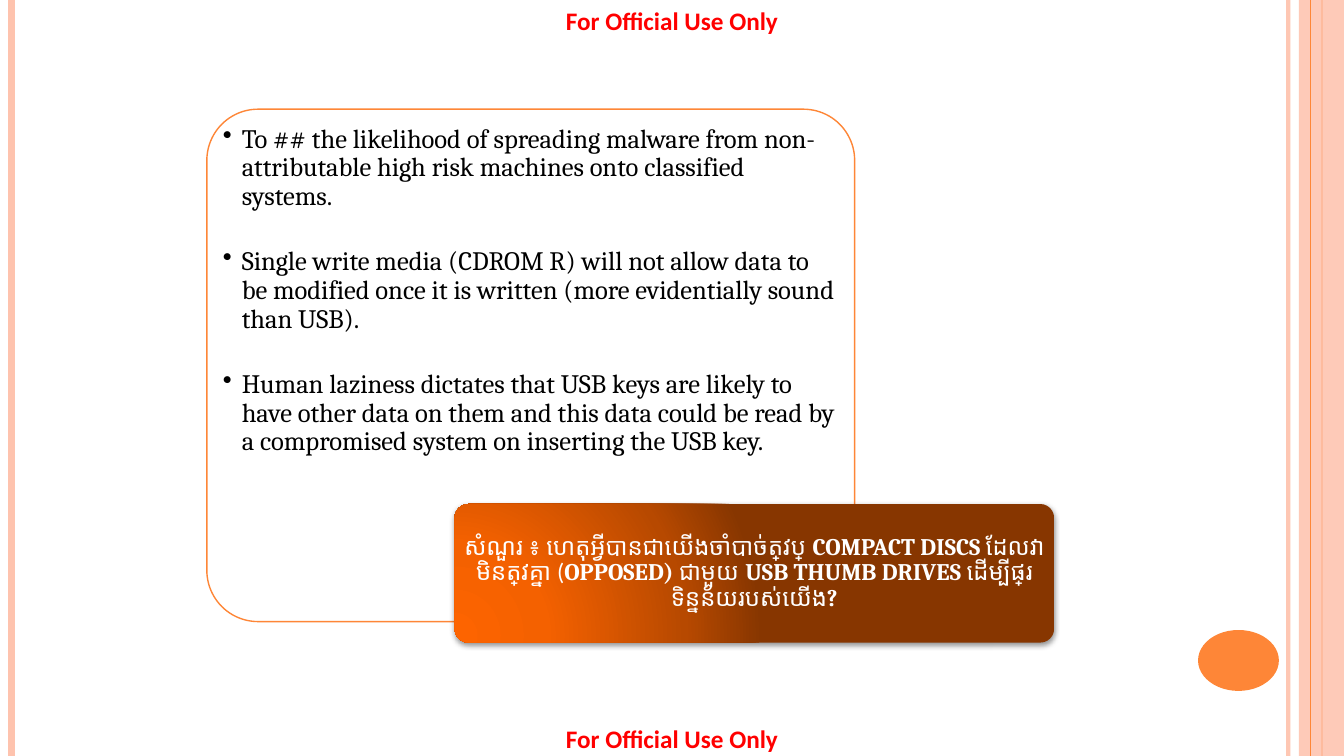
from dataclasses import dataclass

from lxml import etree
from pptx import Presentation
from pptx import util as u
from pptx.dml.color import RGBColor
from pptx.enum import shapes, text
from pptx.oxml import parse_xml
from pptx.oxml.ns import qn

PX = 9525
WIDTH, HEIGHT = 1280, 720
NS = 'xmlns:a="http://schemas.openxmlformats.org/drawingml/2006/main"'


@dataclass(frozen=True)
class Theme:
    """Colours, fonts and type sizes of the slide."""
    peach: str = "FEC3AE"
    orange: str = "FE8637"
    paper: str = "FFFFFF"
    ink: str = "000000"
    marking: str = "FF0000"
    glow: tuple = ((0, "FD6400"), (30, "F46100"), (75, "B74900"), (100, "873600"))
    sans: str = "Calibri"
    serif: str = "Cambria"
    marking_size: int = 18
    reason_size: int = 19
    question_size: int = 17


THEME = Theme()
MARKING = "For Official Use Only"
REASONS = (
    "To ## the likelihood of spreading malware from non-attributable high risk "
    "machines onto classified systems.",
    "Single write media (CDROM R) will not allow data to be modified once it is "
    "written (more evidentially sound than USB).",
    "Human laziness dictates that USB keys are likely to have other data on them "
    "and this data could be read by a compromised system on inserting the USB key.",
)
QUESTION = (
    ("សំណួរ ៖ ហេតុអ្វីបានជាយើងចាំបាច់ត្រូវប្រើ", False),
    (" COMPACT DISCS ", True),
    ("ដែលវាមិនត្រូវគ្នា (", False),
    ("OPPOSED) ", True),
    ("ជាមួយ", False),
    (" USB THUMB DRIVES ", True),
    ("ដើម្បីផ្ទេរទិន្នន័យរបស់យើង", False),
    ("?", True),
)


def px(*lengths):
    """Turn px lengths into EMU."""
    return [u.Emu(length * PX) for length in lengths]


def rgb(code):
    """Turn a hex code into a colour."""
    return RGBColor.from_string(code)


def set_alpha(properties, percent):
    """Make the solid colour in the given properties see-through."""
    colour = next(properties.iter(qn("a:srgbClr")))
    etree.SubElement(colour, qn("a:alpha")).set("val", str(percent * 1000))


def add_plain(slide, kind, box, fill):
    """Add a filled shape without line or shadow."""
    shape = slide.shapes.add_shape(kind, *px(*box))
    shape.shadow.inherit = False
    shape.fill.solid()
    shape.fill.fore_color.rgb = rgb(fill)
    shape.line.fill.background()
    return shape


def set_frame(frame, margins, anchor):
    """Set wrapping, px margins and anchor of a text frame."""
    frame.word_wrap = True
    frame.vertical_anchor = anchor
    (frame.margin_left, frame.margin_top,
     frame.margin_right, frame.margin_bottom) = px(*margins)


def style_paragraph(paragraph, align, size, colour):
    """Set alignment, type size and colour of a paragraph."""
    paragraph.alignment = align
    paragraph.font.size = u.Pt(size)
    paragraph.font.color.rgb = rgb(colour)


def add_rule(slide, x, top, height, colour, weight):
    """Add one vertical rule."""
    rule = slide.shapes.add_connector(
        shapes.MSO_CONNECTOR.STRAIGHT, *px(x, top, x, top + height))
    rule.line.color.rgb = rgb(colour)
    rule.line.width = u.Pt(weight)
    etree.SubElement(rule.element.spPr, qn("a:effectLst"))
    return rule


def add_border(slide, left, top, width, height):
    """Place the rules, the side band and the disc at the edges."""
    right = left + width
    inner = add_rule(slide, right - 53, top, height, THEME.peach, 3)
    set_alpha(inner.element.spPr, 93)
    add_rule(slide, left + 11, top, height, THEME.peach, 4.5)
    add_rule(slide, right - 21, top, height, THEME.orange, 1.5)
    band = add_plain(slide, shapes.MSO_SHAPE.RECTANGLE,
                     (right - 43, top, 43, height), THEME.peach)
    set_alpha(band.element.spPr, 87)
    add_rule(slide, right - 32, top, height, THEME.orange, 0.75)
    add_plain(slide, shapes.MSO_SHAPE.OVAL,
              (right - 139, top + 600, 77, 58), THEME.orange)


def add_marking(slide, left, top, width, height):
    """Place one handling marking across the given box."""
    frame = slide.shapes.add_textbox(*px(left, top, width, height)).text_frame
    frame.word_wrap = True
    marking = frame.paragraphs[0]
    marking.text = MARKING
    style_paragraph(marking, text.PP_ALIGN.CENTER, THEME.marking_size, THEME.marking)
    marking.font.name = THEME.sans
    marking.font.bold = True


def add_reasons(slide, left, top, width, height):
    """Place the outlined panel with the bulleted reasons."""
    panel = add_plain(slide, shapes.MSO_SHAPE.ROUNDED_RECTANGLE,
                      (left, top, width, height), THEME.paper)
    panel.adjustments[0] = 0.1
    set_alpha(panel.element.spPr, 90)
    panel.line.color.rgb = rgb(THEME.orange)
    panel.line.width = u.Pt(1)
    frame = panel.text_frame
    set_frame(frame, (1, 1, 0, 0), text.MSO_ANCHOR.TOP)
    for index, reason in enumerate(REASONS):
        item = frame.add_paragraph() if index else frame.paragraphs[0]
        item.text = reason
        style_paragraph(item, text.PP_ALIGN.LEFT, THEME.reason_size, THEME.ink)
        item.font.name = THEME.serif
        item.line_spacing = 0.9
        item.space_after = u.Pt(26)
        properties = item._p.get_or_add_pPr()
        properties.set("marL", str(18 * PX))
        properties.set("indent", str(-18 * PX))
        bullet = parse_xml(f'<a:buChar {NS} char="•"/>')
        properties.find(qn("a:defRPr")).addprevious(bullet)


def add_question(slide, left, top, width, height):
    """Place the glowing banner with the question."""
    banner = add_plain(slide, shapes.MSO_SHAPE.ROUNDED_RECTANGLE,
                       (left, top, width, height), THEME.glow[0][1])
    banner.adjustments[0] = 0.1
    properties = banner.element.spPr
    stops = "".join(f'<a:gs pos="{place * 1000}"><a:srgbClr val="{colour}"/></a:gs>'
                    for place, colour in THEME.glow)
    glow = parse_xml(
        f'<a:gradFill {NS} rotWithShape="1"><a:gsLst>{stops}</a:gsLst>'
        '<a:path path="circle"><a:fillToRect l="5000" t="100000" r="120000" '
        'b="10000"/></a:path></a:gradFill>')
    properties.replace(properties.find(qn("a:solidFill")), glow)
    shadow = parse_xml(
        f'<a:effectLst {NS}><a:outerShdw blurRad="{u.Pt(4)}" dist="{u.Pt(1.6)}" '
        f'dir="5400000" rotWithShape="0"><a:srgbClr val="{THEME.ink}">'
        '<a:alpha val="42000"/></a:srgbClr></a:outerShdw></a:effectLst>')
    properties.replace(properties.find(qn("a:effectLst")), shadow)
    set_frame(banner.text_frame, (4, 2, 4, 2), text.MSO_ANCHOR.MIDDLE)
    question = banner.text_frame.paragraphs[0]
    style_paragraph(question, text.PP_ALIGN.CENTER, THEME.question_size, THEME.paper)
    question.line_spacing = 0.9
    for words, is_latin in QUESTION:
        phrase = question.add_run()
        phrase.text = words
        phrase.font.name = THEME.serif if is_latin else THEME.sans
        phrase.font.bold = is_latin


def main():
    """Build the slide and save it."""
    deck = Presentation()
    deck.slide_width, deck.slide_height = px(WIDTH, HEIGHT)
    slide = deck.slides.add_slide(deck.slide_layouts[6])
    add_border(slide, 0, 0, WIDTH, HEIGHT)
    for top in (0, 684):
        add_marking(slide, 0, top, WIDTH, 38)
    add_reasons(slide, 197, 104, 617, 488)
    add_question(slide, 433, 480, 571, 132)
    deck.save("out.pptx")


if __name__ == "__main__":
    main()
